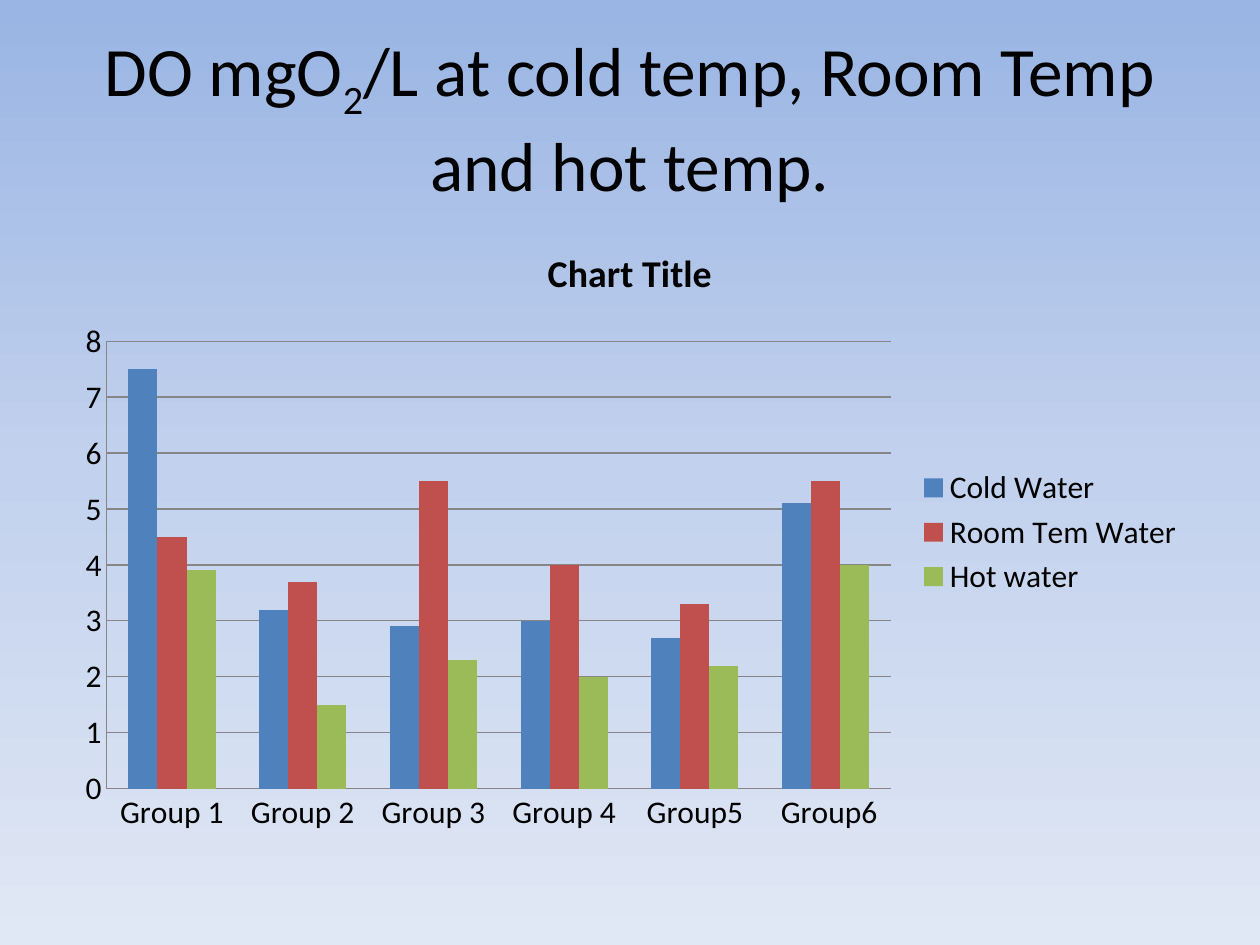
from copy import deepcopy

from pptx import Presentation
from pptx.chart.data import CategoryChartData
from pptx.dml.color import RGBColor
from pptx.enum.chart import XL_CHART_TYPE, XL_LEGEND_POSITION, XL_TICK_MARK
from pptx.enum.text import MSO_ANCHOR, PP_ALIGN
from pptx.oxml.ns import qn
from pptx.util import Inches, Pt

FONT = "Calibri"
BLACK = RGBColor(0x00, 0x00, 0x00)
GRID_GRAY = RGBColor(0x86, 0x86, 0x86)
SKY_STOPS = [
    (0, RGBColor(0x9A, 0xB5, 0xE4)),
    (0.5, RGBColor(0xC2, 0xD1, 0xED)),
    (1, RGBColor(0xE1, 0xE8, 0xF5)),
]
TITLE_RUNS = [
    ("DO mgO", False),
    ("2", True),
    ("/L at cold temp, Room Temp and hot temp.", False),
]
GROUPS = ["Group 1", "Group 2", "Group 3", "Group 4", "Group5", " Group6"]
SERIES = [
    ("Cold Water", [7.5, 3.2, 2.9, 3, 2.7, 5.1], RGBColor(0x4F, 0x81, 0xBD)),
    ("Room Tem Water", [4.5, 3.7, 5.5, 4, 3.3, 5.5], RGBColor(0xC0, 0x50, 0x4D)),
    ("Hot water", [3.9, 1.5, 2.3, 2, 2.2, 4], RGBColor(0x9B, 0xBB, 0x59)),
]


def style_font(font, size, bold=False):
    """Apply the slide's typeface and text colour."""
    font.name = FONT
    font.size = Pt(size)
    font.bold = bold
    font.color.rgb = BLACK


def paint_background(slide):
    """Fill the background with a vertical three-stop gradient."""
    fill = slide.background.fill
    fill.gradient()
    fill.gradient_angle = 270
    stop_list = slide.element.find(".//" + qn("a:gsLst"))
    stop_list.insert(1, deepcopy(stop_list[0]))
    for stop, (position, color) in zip(fill.gradient_stops, SKY_STOPS):
        stop.position = position
        stop.color.rgb = color


def add_title(slide, left, top, width, height):
    """Write the centred title with its subscript."""
    text_frame = slide.shapes.add_textbox(left, top, width, height).text_frame
    text_frame.word_wrap = True
    text_frame.vertical_anchor = MSO_ANCHOR.MIDDLE
    paragraph = text_frame.paragraphs[0]
    paragraph.alignment = PP_ALIGN.CENTER
    for text, is_subscript in TITLE_RUNS:
        run = paragraph.add_run()
        run.text = text
        style_font(run.font, 39.6)
        if is_subscript:
            run.font._element.set("baseline", "-25000")


def add_oxygen_chart(slide, left, top, width, height):
    """Chart the dissolved oxygen of each group at three temperatures."""
    chart_data = CategoryChartData()
    chart_data.categories = GROUPS
    for name, values, _ in SERIES:
        chart_data.add_series(name, values)
    chart = slide.shapes.add_chart(
        XL_CHART_TYPE.COLUMN_CLUSTERED, left, top, width, height, chart_data
    ).chart
    style_font(chart.font, 18)

    chart.has_title = True
    title_frame = chart.chart_title.text_frame
    title_frame.text = "Chart Title"
    style_font(title_frame.paragraphs[0].runs[0].font, 21.6, bold=True)
    chart.chart_title.include_in_layout = False

    chart.has_legend = True
    chart.legend.position = XL_LEGEND_POSITION.RIGHT
    chart.legend.include_in_layout = False

    for axis in (chart.category_axis, chart.value_axis):
        axis.major_tick_mark = XL_TICK_MARK.NONE
        axis.minor_tick_mark = XL_TICK_MARK.NONE
        axis.format.line.color.rgb = GRID_GRAY
        axis.format.line.width = Pt(0.75)
    value_axis = chart.value_axis
    value_axis.minimum_scale = 0
    value_axis.maximum_scale = 8
    value_axis.major_unit = 1
    value_axis.has_major_gridlines = True
    gridline = value_axis.major_gridlines.format.line
    gridline.color.rgb = GRID_GRAY
    gridline.width = Pt(0.75)

    plot = chart.plots[0]
    plot.gap_width = 150
    plot.vary_by_categories = False
    for series, (_, _, color) in zip(plot.series, SERIES):
        series.format.fill.solid()
        series.format.fill.fore_color.rgb = color


def main():
    """Build and save the presentation."""
    presentation = Presentation()
    presentation.slide_width = Inches(10)
    presentation.slide_height = Inches(7.5)
    slide = presentation.slides.add_slide(presentation.slide_layouts[6])
    paint_background(slide)
    add_title(slide, Inches(0.5), Inches(0.3), Inches(9), Inches(1.25))
    add_oxygen_chart(slide, Inches(0.5), Inches(1.75), Inches(9), Inches(4.95))
    presentation.save("out.pptx")


if __name__ == "__main__":
    main()
